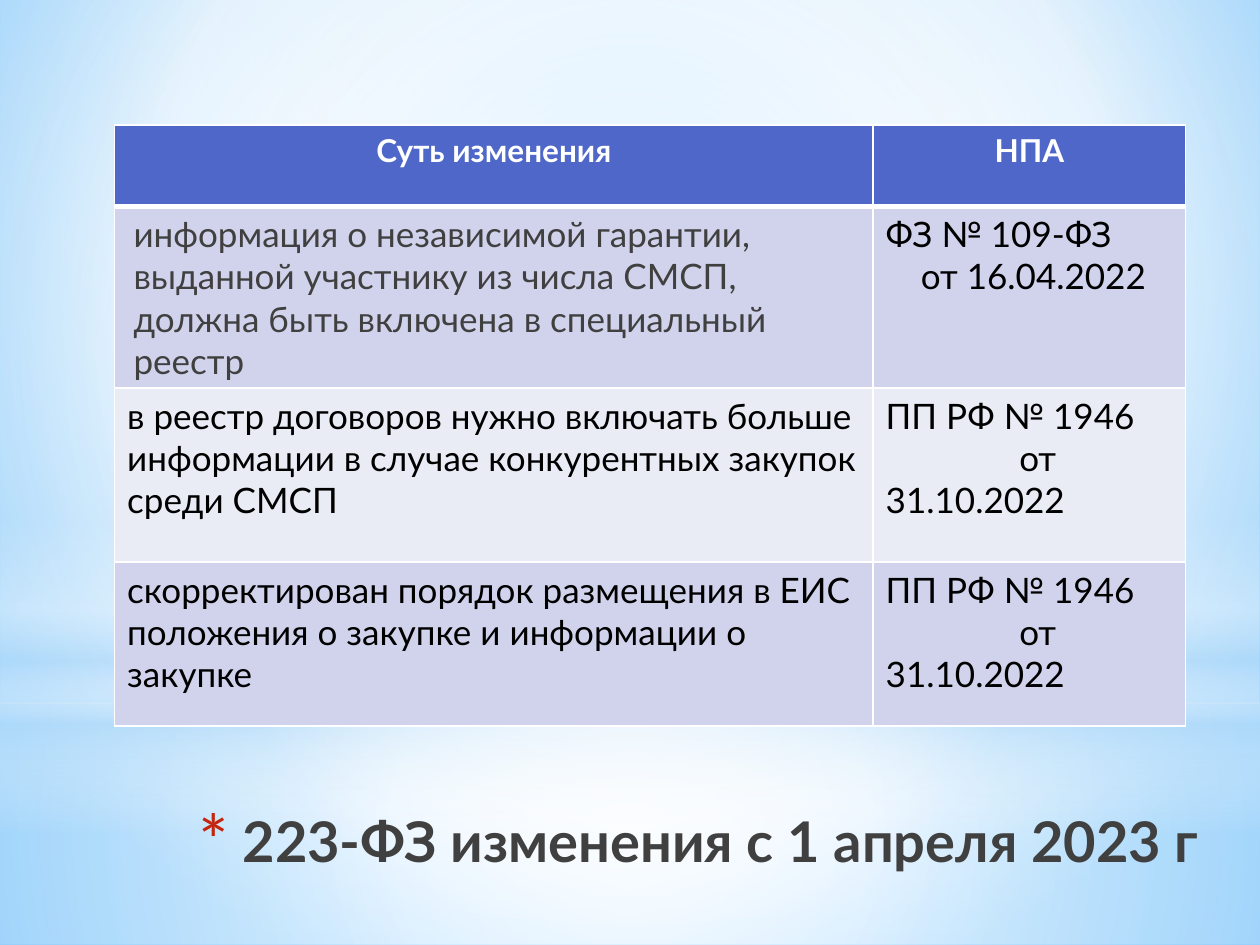
"""Builds a slide with a table of procurement law changes."""
from typing import NamedTuple

from lxml import etree
from pptx import Presentation
from pptx.dml.color import RGBColor
from pptx.enum.shapes import MSO_SHAPE
from pptx.enum.text import MSO_ANCHOR, PP_ALIGN
from pptx.oxml import parse_xml
from pptx.oxml.ns import nsdecls, qn
from pptx.util import Inches, Pt

RECT, OVAL = MSO_SHAPE.RECTANGLE, MSO_SHAPE.OVAL
LEFT, CENTER, RIGHT = PP_ALIGN.LEFT, PP_ALIGN.CENTER, PP_ALIGN.RIGHT
TOP = MSO_ANCHOR.TOP

FONT = "Lato"
WHITE = RGBColor(0xFF, 0xFF, 0xFF)
BLACK = RGBColor(0x00, 0x00, 0x00)
GRAY = RGBColor(0x40, 0x40, 0x40)
RED = RGBColor(0xC3, 0x26, 0x0C)
SKY = RGBColor(0xB4, 0xDC, 0xFA)
BG_EDGE = RGBColor(0x5B, 0xB9, 0xFF)
BG_START = RGBColor(0x9E, 0xD5, 0xFF)
HEADER = RGBColor(0x4E, 0x67, 0xC8)
BAND_DARK = RGBColor(0xD0, 0xD3, 0xEB)
BAND_LIGHT = RGBColor(0xE9, 0xEB, 0xF5)


class Stop(NamedTuple):
    pos: int
    color: RGBColor
    alpha: int = 100


class Glow(NamedTuple):
    kind: int
    top: float
    height: float
    stops: list[Stop]
    radial: bool = True


class Line(NamedTuple):
    text: str
    indent: float = 0


class Change(NamedTuple):
    text: str
    act: list[Line]
    height: float
    color: RGBColor = BLACK
    indent: float = 0


GLOWS = [
    Glow(RECT, 5.58, 1.92, [Stop(0, WHITE, 91), Stop(37, WHITE, 76), Stop(100, SKY, 79)]),
    Glow(RECT, 0, 5.58, [Stop(0, WHITE, 89), Stop(48, WHITE, 62), Stop(100, SKY, 79)]),
    Glow(RECT, 4.12, 2.5, [Stop(0, WHITE, 0), Stop(29, WHITE, 30), Stop(45, SKY, 40),
                           Stop(55, WHITE, 26), Stop(65, SKY, 60), Stop(100, WHITE, 0)], False),
    Glow(OVAL, 1.75, 5.58, [Stop(0, WHITE), Stop(56, WHITE, 0)]),
]
DECREE = [Line("ПП РФ № 1946"), Line("от", 1.06), Line("31.10.2022")]
CHANGES = [
    Change("информация о независимой гарантии, выданной участнику из числа СМСП, "
           "должна быть включена в специальный реестр",
           [Line("ФЗ № 109-ФЗ"), Line("от 16.04.2022", 0.28)], 1.38, GRAY, 0.05),
    Change("в реестр договоров нужно включать больше информации в случае "
           "конкурентных закупок среди СМСП", DECREE, 1.38),
    Change("скорректирован порядок размещения в ЕИС положения о закупке "
           "и информации о закупке", DECREE, 1.3),
]


def set_gradient(props, stops: list[Stop], focus=(50, 50, 50, 50), radial: bool = True) -> None:
    items = "".join(
        f'<a:gs pos="{s.pos * 1000}"><a:srgbClr val="{s.color}">'
        f'<a:alpha val="{s.alpha * 1000}"/></a:srgbClr></a:gs>' for s in stops)
    l, t, r, b = (v * 1000 for v in focus)
    shade = (f'<a:path path="circle"><a:fillToRect l="{l}" t="{t}" r="{r}" b="{b}"/></a:path>'
             if radial else '<a:lin ang="5400000" scaled="0"/>')
    grad = parse_xml(f'<a:gradFill {nsdecls("a")} rotWithShape="1">'
                     f'<a:gsLst>{items}</a:gsLst>{shade}</a:gradFill>')
    props.replace(props.find(qn("a:solidFill")), grad)


def add_glow(slide, glow: Glow) -> None:
    sp = slide.shapes.add_shape(glow.kind, 0, Inches(glow.top), Inches(10), Inches(glow.height))
    sp.shadow.inherit = False
    sp.line.fill.background()
    sp.fill.solid()
    set_gradient(sp._element.spPr, glow.stops, radial=glow.radial)


def write(p, text: str, *, size: int = 20, color: RGBColor = BLACK, bold: bool = False,
          align: int = LEFT, indent: float = 0, hanging: float = 0) -> None:
    p.alignment = align
    pPr = p._p.get_or_add_pPr()
    pPr.set("marL", str(Inches(indent)))
    pPr.set("indent", str(Inches(-hanging)))
    r = p.add_run()
    r.text = text
    r.font.name, r.font.size, r.font.bold = FONT, Pt(size), bold
    r.font.color.rgb = color


def add_bullet(p, char: str, color: RGBColor, percent: int) -> None:
    pPr = p._p.get_or_add_pPr()
    clr = etree.SubElement(pPr, qn("a:buClr"))
    etree.SubElement(clr, qn("a:srgbClr"), val=str(color))
    etree.SubElement(pPr, qn("a:buSzPct"), val=str(percent * 1000))
    etree.SubElement(pPr, qn("a:buFont"), typeface=FONT)
    etree.SubElement(pPr, qn("a:buChar"), char=char)


def style_cell(cell, fill: RGBColor, bottom: int = 1, top: int = 1) -> None:
    tcPr = cell._tc.get_or_add_tcPr()
    for side, width in (("L", 1), ("R", 1), ("T", top), ("B", bottom)):
        ln = etree.SubElement(tcPr, qn(f"a:ln{side}"), w=str(Pt(width)))
        solid = etree.SubElement(ln, qn("a:solidFill"))
        etree.SubElement(solid, qn("a:srgbClr"), val=str(WHITE))
    cell.fill.solid()
    cell.fill.fore_color.rgb = fill


def add_changes(slide) -> None:
    table = slide.shapes.add_table(len(CHANGES) + 1, 2, Inches(0.91), Inches(0.99),
                                   Inches(8.5), Inches(4.72)).table
    for col, width in zip(table.columns, (6.02, 2.48)):
        col.width = Inches(width)
    table.rows[0].height = Inches(0.65)
    for cell, text in zip(table.rows[0].cells, ("Суть изменения", "НПА")):
        style_cell(cell, HEADER, bottom=3)
        write(cell.text_frame.paragraphs[0], text, size=18, color=WHITE, bold=True, align=CENTER)
    for i, change in enumerate(CHANGES, 1):
        row = table.rows[i]
        row.height = Inches(change.height)
        for cell in row.cells:
            style_cell(cell, BAND_DARK if i % 2 else BAND_LIGHT, top=3 if i == 1 else 1)
        write(row.cells[0].text_frame.paragraphs[0], change.text,
              color=change.color, indent=change.indent)
        tf = row.cells[1].text_frame
        for n, line in enumerate(change.act):
            p = tf.add_paragraph() if n else tf.paragraphs[0]
            write(p, line.text, indent=line.indent)


def add_title(slide) -> None:
    sp = slide.shapes.title
    sp.left, sp.top, sp.width, sp.height = (Inches(v) for v in (0.91, 6.35, 8.71, 0.79))
    slide.shapes._spTree.append(sp._element)
    tf = sp.text_frame
    tf.word_wrap = True
    tf.vertical_anchor = TOP
    p = tf.paragraphs[0]
    write(p, "223-ФЗ изменения с 1 апреля 2023 г", size=32, color=GRAY, bold=True,
          align=RIGHT, indent=0.35, hanging=0.35)
    add_bullet(p, "*", RED, 128)


def main() -> None:
    prs = Presentation()
    prs.slide_width, prs.slide_height = Inches(10), Inches(7.5)
    slide = prs.slides.add_slide(prs.slide_layouts[5])
    slide.background.fill.solid()
    set_gradient(slide._element.find(f".//{qn('p:bgPr')}"),
                 [Stop(0, BG_START), Stop(60, WHITE), Stop(100, BG_EDGE)], (20, 10, 20, 60))
    for glow in GLOWS:
        add_glow(slide, glow)
    add_title(slide)
    add_changes(slide)
    prs.save("out.pptx")


if __name__ == "__main__":
    main()
